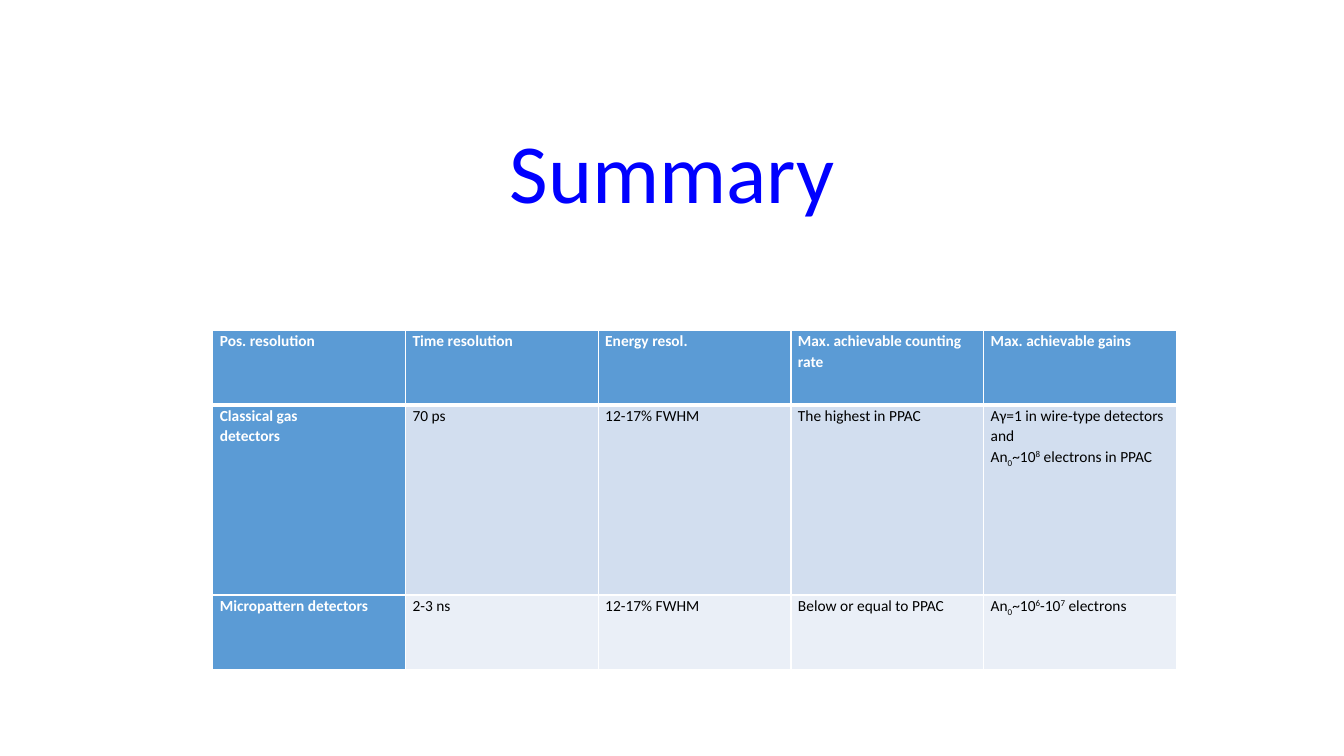
from dataclasses import dataclass

from lxml import etree
from pptx import Presentation
from pptx.dml.color import RGBColor
from pptx.enum.text import MSO_ANCHOR, PP_ALIGN
from pptx.oxml.ns import qn
from pptx.util import Inches, Pt

CENTER = PP_ALIGN.CENTER
TOP, BOTTOM = MSO_ANCHOR.TOP, MSO_ANCHOR.BOTTOM
TITLE_ONLY = 5


@dataclass(frozen=True)
class Theme:
    font: str = "Calibri"
    title_size: int = 60
    cell_size: int = 11
    title: str = "0000FF"
    header: str = "5B9BD5"
    bands: tuple = ("D2DEEF", "EAEFF7")
    light: str = "FFFFFF"
    dark: str = "000000"
    rule: int = 1
    header_rule: int = 3
    title_spacing: float = 0.9
    cell_spacing: float = 1.07
    cell_inset: float = 0.07


def apply(target, **values):
    for name, value in values.items():
        setattr(target, name, value)


class SlideBuilder:
    # Marks that open a lowered or raised part of a text, parts split by "|"
    BASELINES = {"_": -25000, "^": 30000}

    def __init__(self, prs, theme):
        self.prs, self.theme = prs, theme
        self.slide = prs.slides.add_slide(prs.slide_layouts[TITLE_ONLY])

    def box(self, x, y, w, h):
        """Turn percentages of the slide's size into lengths."""
        width, height = self.prs.slide_width, self.prs.slide_height
        return [int(share * side / 100) for share, side in
                zip((x, y, w, h), (width, height, width, height))]

    def add_runs(self, p, text, size, color, bold=False):
        for part in text.split("|"):
            baseline = self.BASELINES.get(part[0])
            r = p.add_run()
            r.text = part[1:] if baseline else part
            apply(r.font, name=self.theme.font, size=Pt(size), bold=bold)
            r.font.color.rgb = RGBColor.from_string(color)
            if baseline:
                r._r.get_or_add_rPr().set("baseline", str(baseline))

    def title(self, text, area):
        sp = self.slide.shapes.title
        left, top, width, height = self.box(*area)
        apply(sp, left=left, top=top, width=width, height=height)
        tf = sp.text_frame
        apply(tf, word_wrap=True, vertical_anchor=BOTTOM)
        p = tf.paragraphs[0]
        apply(p, alignment=CENTER, line_spacing=self.theme.title_spacing)
        self.add_runs(p, text, self.theme.title_size, self.theme.title)

    def borders(self, cell, **widths):
        tcPr = cell._tc.get_or_add_tcPr()
        for i, (side, width) in enumerate(widths.items()):
            ln = etree.Element(qn(f"a:ln{side}"), w=str(Pt(width)))
            fill = etree.SubElement(ln, qn("a:solidFill"))
            etree.SubElement(fill, qn("a:srgbClr"), val=self.theme.light)
            tcPr.insert(i, ln)

    def cell(self, cell, text, row, column):
        t = self.theme
        heading = row == 0 or column == 0
        inset = Inches(t.cell_inset)
        apply(cell, margin_left=inset, margin_right=inset, margin_top=0,
              margin_bottom=0, vertical_anchor=TOP)
        cell.fill.solid()
        fill = t.header if heading else t.bands[(row - 1) % 2]
        cell.fill.fore_color.rgb = RGBColor.from_string(fill)
        tf = cell.text_frame
        for i, line in enumerate(text.split("\n")):
            p = tf.add_paragraph() if i else tf.paragraphs[0]
            p.line_spacing = t.cell_spacing
            self.add_runs(p, line, t.cell_size, t.light if heading else t.dark, heading)
        self.borders(cell, L=t.rule, R=t.rule,
                     T=t.header_rule if row == 1 else t.rule,
                     B=t.header_rule if row == 0 else t.rule)

    def table(self, rows, area, row_shares):
        frame = self.slide.shapes.add_table(len(rows), len(rows[0]), *self.box(*area))
        table, height = frame.table, frame.height
        for row, share in zip(table.rows, row_shares):
            row.height = int(height * share / sum(row_shares))
        for i, texts in enumerate(rows):
            for j, text in enumerate(texts):
                self.cell(table.cell(i, j), text, i, j)


prs = Presentation()
apply(prs, slide_width=Inches(13.33), slide_height=Inches(7.5))
summary = SlideBuilder(prs, Theme())

# Title
summary.title("Summary", (12.5, 16.4, 75, 13.6))

# Comparison of detector types
DETECTORS = [
    ["Pos. resolution", "Time resolution", "Energy resol.",
     "Max. achievable counting rate", "Max. achievable gains"],
    ["Classical gas\ndetectors", "70 ps", "12-17% FWHM", "The highest in PPAC",
     "Aγ=1 in wire-type detectors and \nAn|_0|~10|^8| electrons in PPAC"],
    ["Micropattern detectors", "2-3 ns", "12-17% FWHM", "Below or equal to PPAC",
     "An|_0|~10|^6|-10|^7| electrons"],
]
summary.table(DETECTORS, (15.83, 43.73, 71.7, 44.87), (0.74, 1.88, 0.74))

prs.save("out.pptx")
